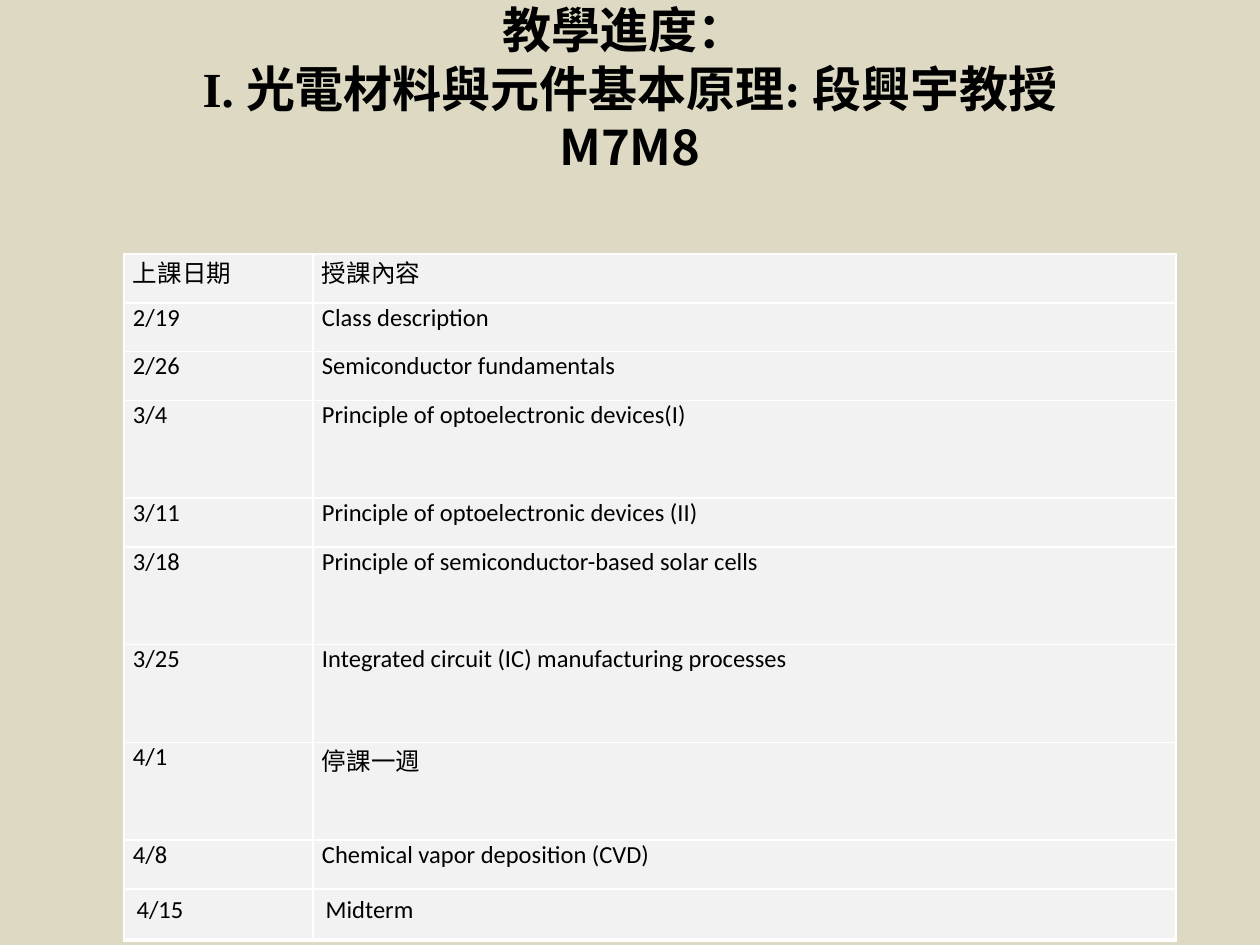
from lxml.etree import SubElement
from pptx import Presentation
from pptx.dml.color import RGBColor
from pptx.enum.text import MSO_ANCHOR, MSO_AUTO_SIZE, PP_ALIGN
from pptx.oxml.ns import qn
from pptx.util import Pt

PX = 914400 / 126
CJK, SERIF = "Noto Sans CJK SC", "Times New Roman"
TITLE_LINES = [
    [("教學進度： ", CJK)],
    [("I. ", SERIF), ("光電材料與元件基本原理", CJK), (": ", SERIF), ("段興宇教授", CJK)],
    [("M7M8", CJK)],
    [],
]
# Date, content, row height in units
SCHEDULE = [
    ("上課日期", "授課內容", 1),
    ("2/19", "Class description", 1),
    ("2/26", "Semiconductor fundamentals ", 1),
    ("3/4", "Principle of optoelectronic devices(I)", 2),
    ("3/11", "Principle of optoelectronic devices (II) ", 1),
    ("3/18", "Principle of semiconductor-based solar cells ", 2),
    ("3/25", "Integrated circuit (IC) manufacturing processes", 2),
    ("4/1", "停課一週", 2),
    ("4/8", "Chemical vapor deposition (CVD)", 1),
]
MIDTERM = [("4/15", "Midterm", 1)]


def px(length):
    return round(length * PX)


def color(hex_string):
    return RGBColor.from_string(hex_string)


def add_title(slide, left, top, width, height):
    title = slide.shapes.title
    title.left, title.top, title.width, title.height = map(px, (left, top, width, height))
    frame = title.text_frame
    frame.auto_size = MSO_AUTO_SIZE.NONE
    frame.vertical_anchor = MSO_ANCHOR.MIDDLE
    heading = frame.paragraphs[0]
    heading.alignment = PP_ALIGN.CENTER
    heading.line_spacing = Pt(33.5)
    heading.font.size = Pt(28)
    heading.font.bold = True
    heading.font.color.rgb = color("000000")
    for number, line in enumerate(TITLE_LINES):
        if number:
            heading.add_line_break()
        for words, typeface in line:
            run = heading.add_run()
            run.text = words
            run.font.name = typeface
            SubElement(run.font._element, qn("a:ea"), typeface=CJK)


def set_borders(cell, hex_string, bottom):
    properties = cell._tc.get_or_add_tcPr()
    for side, points in (("L", 1), ("R", 1), ("T", 1), ("B", bottom)):
        line = SubElement(properties, qn("a:ln" + side), w=str(Pt(points)))
        SubElement(SubElement(line, qn("a:solidFill")), qn("a:srgbClr"), val=hex_string)


def add_schedule(slide, entries, left, top, width, height, date_width,
                 margins=None, alignment=PP_ALIGN.LEFT, bottom=1):
    """Share the height among the entries; margins are (side, top and bottom)."""
    table = slide.shapes.add_table(
        len(entries), 2, px(left), px(top), px(width), px(height)).table
    table.first_row = table.horz_banding = False
    table.columns[0].width = px(date_width)
    table.columns[1].width = px(width - date_width)
    unit = height / sum(units for *_, units in entries)
    for row, (date, content, units) in zip(table.rows, entries):
        row.height = px(unit * units)
        for cell, words in zip(row.cells, (date, content)):
            set_borders(cell, "FFFFFF", bottom)
            cell.fill.solid()
            cell.fill.fore_color.rgb = color("F2F2F2")
            if margins:
                cell.margin_left = cell.margin_right = px(margins[0])
                cell.margin_top = cell.margin_bottom = px(margins[1])
            cell.text = words
            paragraph = cell.text_frame.paragraphs[0]
            paragraph.alignment = alignment
            paragraph.font.name = "Calibri"
            paragraph.font.size = Pt(14)
            paragraph.font.color.rgb = color("000000")


def main():
    presentation = Presentation()
    presentation.slide_width, presentation.slide_height = px(1260), px(945)
    slide = presentation.slides.add_slide(presentation.slide_layouts[5])
    slide.background.fill.solid()
    slide.background.fill.fore_color.rgb = color("DDD9C3")
    add_title(slide, 63, 38, 1134, 158)
    left, top, width, height, date_width = 124, 254, 1052, 635, 189
    add_schedule(slide, SCHEDULE, left, top, width, height, date_width,
                 margins=(9, 0), alignment=PP_ALIGN.JUSTIFY)
    add_schedule(slide, MIDTERM, left, top + height, width, 51, date_width, bottom=3)
    presentation.save("out.pptx")


if __name__ == "__main__":
    main()
